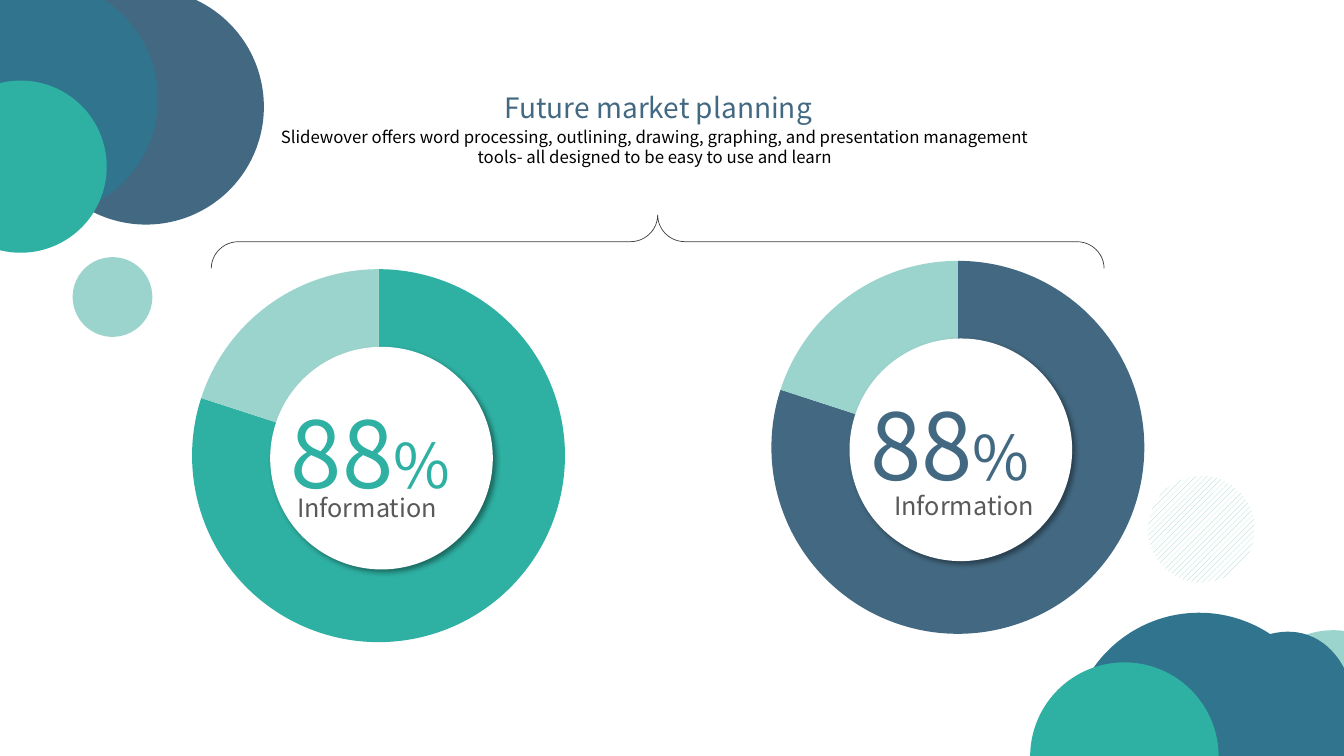
from lxml.etree import SubElement
from pptx import Presentation
from pptx.chart.data import CategoryChartData
from pptx.dml.color import RGBColor
from pptx.enum.chart import XL_CHART_TYPE
from pptx.enum.dml import MSO_PATTERN
from pptx.enum.shapes import MSO_SHAPE
from pptx.enum.text import PP_ALIGN
from pptx.oxml import parse_xml
from pptx.oxml.ns import nsdecls, qn
from pptx.util import Cm, Pt

FONT = "Noto Sans CJK SC"
COLORS = {
    "mint": "9BD4CC", "teal": "2EB0A2", "blue": "30748D", "navy": "436982",
    "white": "FFFFFF", "black": "000000", "gray": "595959", "line": "404040",
}
SHADOW = (
    f'<a:effectLst {nsdecls("a")}><a:outerShdw blurRad="50800" dist="38100" '
    'dir="2700000" algn="tl" rotWithShape="0"><a:srgbClr val="000000">'
    '<a:alpha val="40000"/></a:srgbClr></a:outerShdw></a:effectLst>'
)


def add_ellipse(left, top, width, height, color, rotation=0):
    sp = s.shapes.add_shape(MSO_SHAPE.OVAL, Cm(left), Cm(top), Cm(width), Cm(height))
    sp.rotation = rotation
    sp.shadow.inherit = False
    sp.fill.solid()
    sp.fill.fore_color.rgb = RGBColor.from_string(COLORS[color])
    sp.line.fill.background()
    return sp


def add_text(left, top, width, height, parts, color, inset=True):
    tf = s.shapes.add_textbox(Cm(left), Cm(top), Cm(width), Cm(height)).text_frame
    tf.word_wrap = True
    if not inset:
        tf.margin_left = tf.margin_top = tf.margin_right = tf.margin_bottom = 0
    p = tf.paragraphs[0]
    p.alignment = PP_ALIGN.CENTER
    p.font.name = FONT
    p.font.color.rgb = RGBColor.from_string(COLORS[color])
    for text, size in parts:
        r = p.add_run()
        r.text = text
        r.font.size = Pt(size)


prs = Presentation()
prs.slide_width, prs.slide_height = Cm(33.87), Cm(19.05)
s = prs.slides.add_slide(prs.slide_layouts[6])

for left, top, width, height, color, rotation in [
    (1.83, 6.48, 2.01, 2.01, "mint", 47.3),
    (0.71, -0.28, 5.94, 5.94, "navy", 47.3),
    (-1.96, -0.48, 5.94, 5.94, "blue", 47.3),
    (-1.65, 2.03, 4.34, 4.34, "teal", 47.3),
    (31.5, 15.88, 4.19, 4.19, "mint", 110.1),
    (28.93, 16.74, 6.02, 4.19, "blue", 110.1),
    (26.97, 15.44, 6.5, 6.5, "blue", 110.1),
    (25.96, 16.69, 4.75, 4.75, "teal", 110.1),
]:
    add_ellipse(left, top, width, height, color, rotation)

striped = add_ellipse(28.93, 11.99, 2.69, 2.69, "mint", 110.1)
striped.fill.patterned()
striped.fill.pattern = MSO_PATTERN.WIDE_UPWARD_DIAGONAL
striped.fill.fore_color.rgb = RGBColor.from_string(COLORS["mint"])
striped.fill.back_color.rgb = RGBColor.from_string(COLORS["white"])

for left, top, color, label_left, label_top, label_width in [
    (1.96, 6.43, "teal", 7.14, 12.27, 4.22),
    (16.56, 6.22, "navy", 22, 12.24, 4.6),
]:
    data = CategoryChartData()
    data.categories = ["1", "2"]
    data.add_series("Series 1", (80, 20))
    chart = s.shapes.add_chart(
        XL_CHART_TYPE.PIE, Cm(left), Cm(top), Cm(15.16), Cm(10.11), data
    ).chart
    chart.has_legend = False
    chart.has_title = False
    chart.font.name = FONT
    chart.font.size = Pt(10)
    chart.font.color.rgb = RGBColor.from_string(COLORS["black"])
    plot = chart.plots[0]
    plot.vary_by_categories = False
    for i, slice_color in enumerate((color, "mint")):
        slice_format = plot.series[0].points[i].format
        slice_format.fill.solid()
        slice_format.fill.fore_color.rgb = RGBColor.from_string(COLORS[slice_color])
        slice_format.line.fill.background()

    plot_area = chart.element.find(".//" + qn("c:plotArea"))
    layout = plot_area.find(qn("c:layout"))
    if layout is None:
        layout = SubElement(plot_area, qn("c:layout"))
        plot_area.insert(0, layout)
    manual = SubElement(layout, qn("c:manualLayout"))
    for tag, value in [
        ("layoutTarget", "inner"), ("xMode", "edge"), ("yMode", "edge"),
        ("x", "0.19"), ("y", "0.03"), ("w", "0.62"), ("h", "0.94"),
    ]:
        SubElement(manual, qn("c:" + tag)).set("val", value)

    hole = add_ellipse(left + 4.85, top + 2.31, 5.61, 5.61, "white")
    sp_pr = hole.element.spPr
    sp_pr.replace(sp_pr.find(qn("a:effectLst")), parse_xml(SHADOW))
    add_text(left + 4.85, top + 3.44, 5.05, 3.07, [("88", 66), ("%", 44)], color)
    add_text(label_left, label_top, label_width, 1.02, [("Information", 18)], "gray")

brace = s.shapes.add_shape(
    MSO_SHAPE.RIGHT_BRACE, Cm(15.9), Cm(-5.16), Cm(1.35), Cm(22.5)
)
brace.rotation = 270
brace.adjustments[0] = 0.51
brace.adjustments[1] = 0.5
brace.shadow.inherit = False
brace.fill.background()
brace.line.color.rgb = RGBColor.from_string(COLORS["line"])
brace.line.width = Pt(0.5)

description = (
    "Slidewover offers word processing, outlining, drawing, graphing, and presentation "
    "management tools- all designed to be easy to use and learn"
)
add_text(6.6, 3.2, 19.81, 1.02, [(description, 12)], "black", inset=False)
add_text(11.23, 2.29, 10.72, 0.86, [("Future market planning", 20)], "navy", inset=False)

prs.save("out.pptx")
